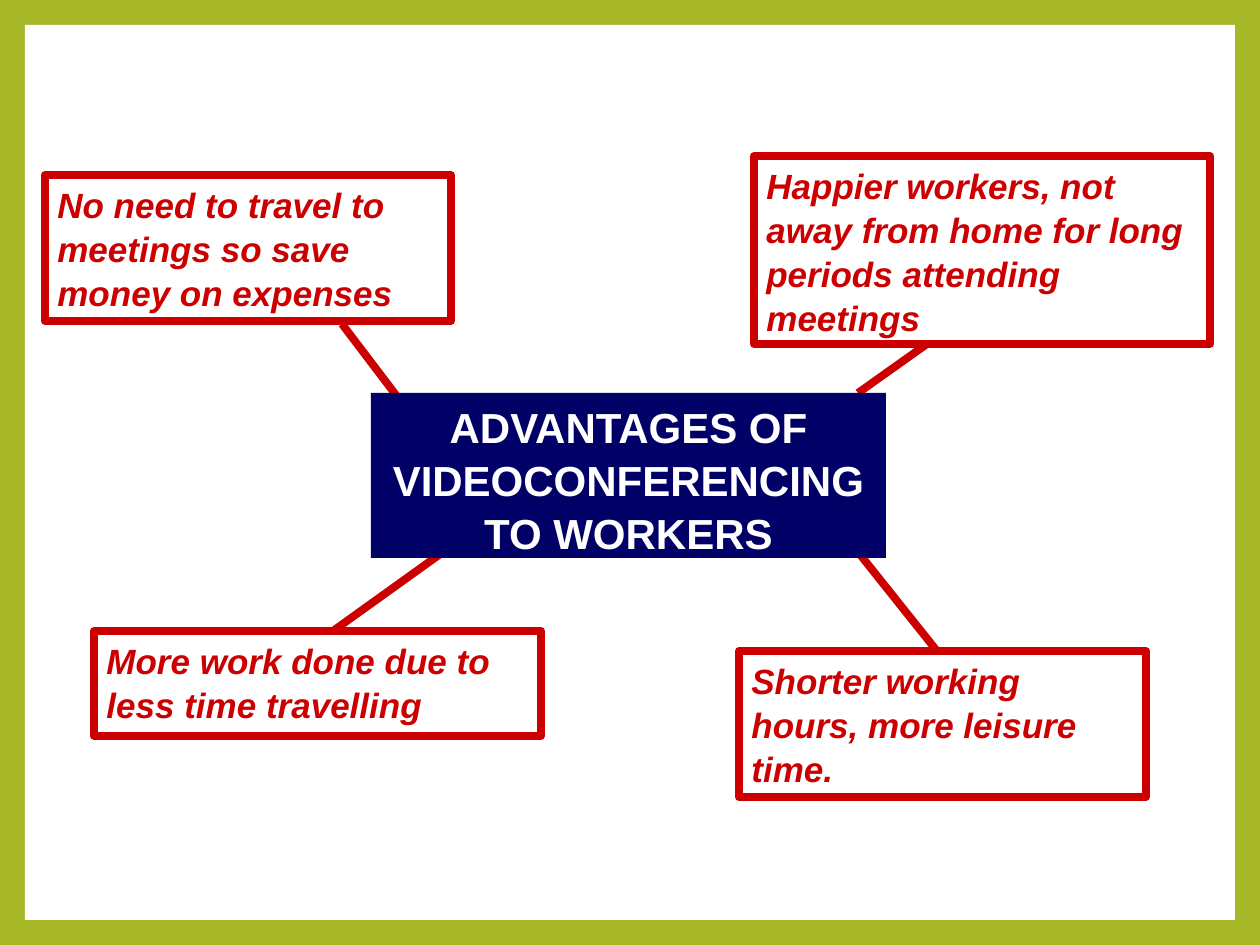
from dataclasses import dataclass

from lxml.etree import SubElement
from pptx import Presentation
from pptx.dml.color import RGBColor
from pptx.enum.shapes import MSO_CONNECTOR, MSO_SHAPE
from pptx.enum.text import MSO_ANCHOR, PP_ALIGN
from pptx.oxml.ns import qn
from pptx.util import Pt

EMU_PER_PX = 914400 / 126

GREEN = RGBColor(0xA6, 0xB7, 0x27)
WHITE = RGBColor(0xFF, 0xFF, 0xFF)
RED = RGBColor(0xCC, 0x00, 0x00)
NAVY = RGBColor(0x00, 0x00, 0x66)

FONT = "Arial"
LINE_WIDTH = Pt(4.5)
LINE_SPACING = 1.05


@dataclass(frozen=True)
class Box:
    left: int
    top: int
    width: int
    height: int


@dataclass(frozen=True)
class Advantage:
    text: str
    box: Box
    line_start: tuple[int, int]
    line_end: tuple[int, int]


ADVANTAGES = [
    Advantage("No need to travel to meetings so save money on expenses",
              Box(45, 175, 406, 146), (402, 403), (342, 324)),
    Advantage("More work done due to less time travelling",
              Box(94, 631, 447, 105), (333, 631), (471, 532)),
    Advantage("Happier workers, not away from home for long periods attending meetings",
              Box(754, 156, 456, 188), (858, 393), (927, 344)),
    Advantage("Shorter working hours, more leisure time.",
              Box(739, 651, 407, 146), (858, 552), (937, 651)),
]
PANEL = Box(25, 25, 1210, 895)
TOPIC = Box(371, 393, 515, 165)


def px(value: int) -> int:
    return round(value * EMU_PER_PX)


def add_rectangle(slide, box: Box, fill: RGBColor | None = None,
                  line: RGBColor | None = None):
    shape = slide.shapes.add_shape(MSO_SHAPE.RECTANGLE, px(box.left), px(box.top),
                                   px(box.width), px(box.height))
    shape.shadow.inherit = False
    if fill is None:
        shape.fill.background()
    else:
        shape.fill.solid()
        shape.fill.fore_color.rgb = fill
    if line is None:
        shape.line.fill.background()
    else:
        shape.line.color.rgb = line
        shape.line.width = LINE_WIDTH
    return shape


def write_text(shape, text: str, size: int, color: RGBColor,
               alignment: PP_ALIGN, italic: bool = False) -> None:
    frame = shape.text_frame
    frame.text = text
    frame.word_wrap = True
    frame.vertical_anchor = MSO_ANCHOR.TOP
    paragraph = frame.paragraphs[0]
    paragraph.alignment = alignment
    paragraph.line_spacing = LINE_SPACING
    font = paragraph.runs[0].font
    font.name = FONT
    font.size = Pt(size)
    font.bold = True
    font.italic = italic
    font.color.rgb = color


def add_line(slide, start: tuple[int, int], end: tuple[int, int]) -> None:
    connector = slide.shapes.add_connector(
        MSO_CONNECTOR.STRAIGHT, *map(px, start), *map(px, end))
    connector.line.color.rgb = RED
    connector.line.width = LINE_WIDTH
    SubElement(connector._element.spPr, qn("a:effectLst"))


def main() -> None:
    presentation = Presentation()
    presentation.slide_width = px(1260)
    presentation.slide_height = px(945)
    slide = presentation.slides.add_slide(presentation.slide_layouts[6])
    slide.background.fill.solid()
    slide.background.fill.fore_color.rgb = GREEN

    add_rectangle(slide, PANEL, fill=WHITE)
    for advantage in ADVANTAGES:
        shape = add_rectangle(slide, advantage.box, line=RED)
        write_text(shape, advantage.text, 20, RED, PP_ALIGN.LEFT, italic=True)
    for advantage in ADVANTAGES:
        add_line(slide, advantage.line_start, advantage.line_end)

    topic = add_rectangle(slide, TOPIC, fill=NAVY)
    write_text(topic, "ADVANTAGES OF VIDEOCONFERENCING TO WORKERS", 24, WHITE,
               PP_ALIGN.CENTER)

    presentation.save("out.pptx")


if __name__ == "__main__":
    main()
